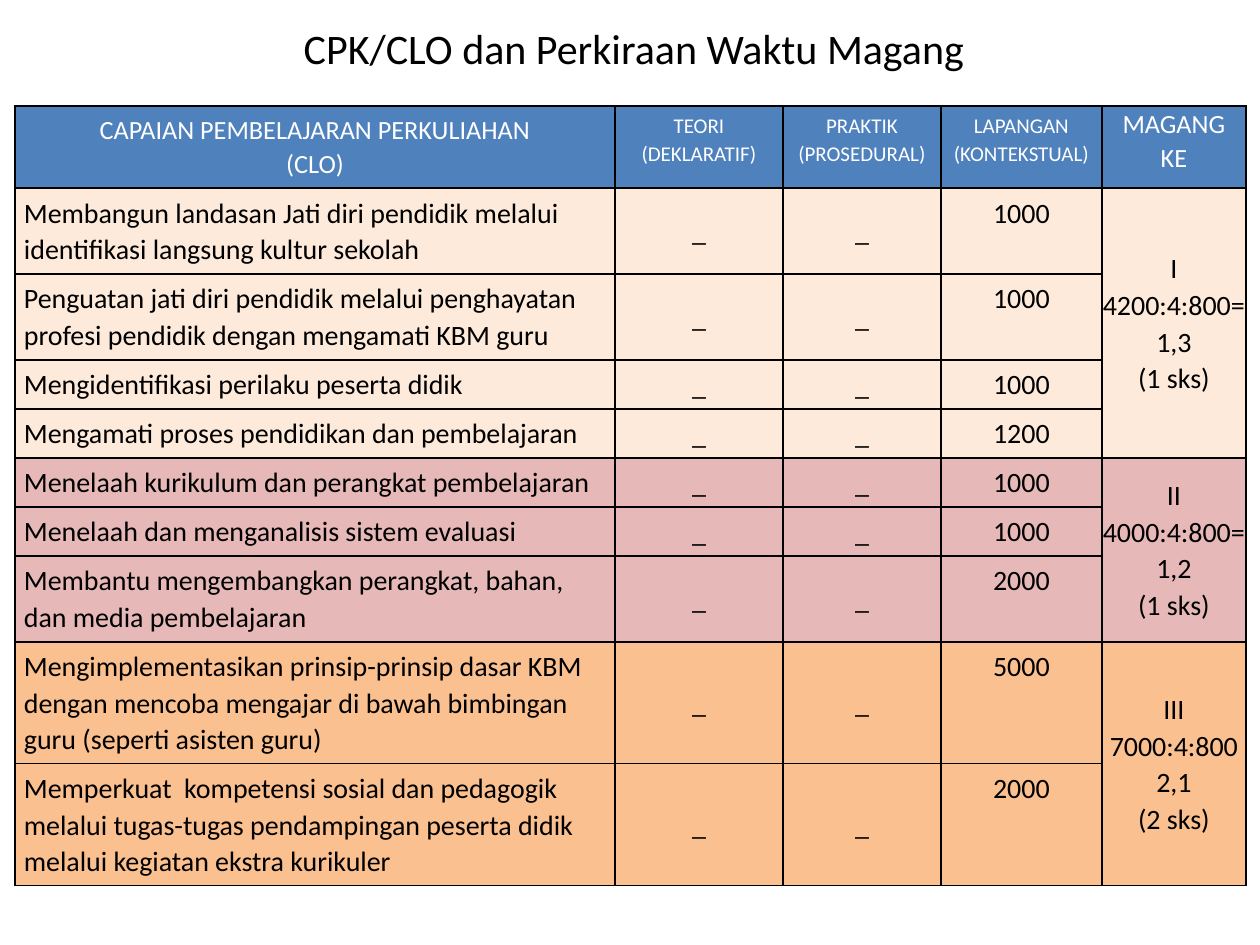
"""Build the slide of internship learning outcomes and their estimated time."""
from dataclasses import dataclass

from lxml.etree import SubElement
from pptx import Presentation
from pptx.dml.color import RGBColor
from pptx.enum.text import MSO_ANCHOR as Anchor, MSO_AUTO_SIZE as AutoSize, PP_ALIGN as Align
from pptx.oxml.ns import qn
from pptx.util import Emu, Pt


@dataclass(frozen=True)
class Theme:
    font: str = "Calibri"
    ink: str = "000000"
    header_ink: str = "FFFFFF"
    header_fill: str = "4F81BD"
    stage_fills: tuple = ("FDEADA", "E6B9B8", "FAC090")
    title_size: int = 24
    header_size: int = 15
    subheader_size: int = 12
    body_size: int = 16
    border_width: int = 1
    line_spacing: float = 1.07


def px(length):
    return Emu(round(length * 914400 / 126))


class SlideBuilder:
    def __init__(self, slide, theme):
        self.slide = slide
        self.theme = theme

    def style(self, text_frame, size, color, align):
        for paragraph in text_frame.paragraphs:
            paragraph.alignment = align
            paragraph.font.name = self.theme.font
            paragraph.font.size = Pt(size)
            paragraph.font.color.rgb = RGBColor.from_string(color)

    def title(self, text, left, top, width, height):
        box = self.slide.shapes.add_textbox(px(left), px(top), px(width), px(height))
        frame = box.text_frame
        frame.word_wrap = True
        frame.auto_size = AutoSize.SHAPE_TO_FIT_TEXT
        frame.text = text
        self.style(frame, self.theme.title_size, self.theme.ink, Align.CENTER)

    def table(self, left, top, widths, heights):
        table = self.slide.shapes.add_table(
            len(heights), len(widths), px(left), px(top), px(sum(widths)), px(sum(heights))
        ).table
        table.first_row = table.horz_banding = False
        for column, width in zip(table.columns, widths):
            column.width = px(width)
        for row, height in zip(table.rows, heights):
            row.height = px(height)
        return table

    def frame_cell(self, cell, fill):
        properties = cell._tc.get_or_add_tcPr()
        for side in ("a:lnL", "a:lnR", "a:lnT", "a:lnB"):
            line = SubElement(properties, qn(side), w=str(Pt(self.theme.border_width)))
            solid = SubElement(line, qn("a:solidFill"))
            SubElement(solid, qn("a:srgbClr"), val=self.theme.ink)
        cell.fill.solid()
        cell.fill.fore_color.rgb = RGBColor.from_string(fill)

    def write_cell(self, cell, text, size, color, align=Align.CENTER,
                   anchor=Anchor.TOP, margins=(9, 6)):
        cell.margin_left = cell.margin_right = px(margins[0])
        cell.margin_top = cell.margin_bottom = px(margins[1])
        cell.vertical_anchor = anchor
        cell.text = text
        self.style(cell.text_frame, size, color, align)
        for paragraph in cell.text_frame.paragraphs:
            paragraph.line_spacing = self.theme.line_spacing


HEADERS = [
    "CAPAIAN PEMBELAJARAN PERKULIAHAN\n(CLO)",
    "TEORI\n(DEKLARATIF)",
    "PRAKTIK (PROSEDURAL)",
    "LAPANGAN (KONTEKSTUAL)",
    "MAGANG\nKE",
]

STAGES = [
    ("I\n4200:4:800=\n1,3\n(1 sks)", [
        ("Membangun landasan Jati diri pendidik melalui\nidentifikasi langsung kultur sekolah", "1000"),
        ("Penguatan jati diri pendidik melalui penghayatan profesi pendidik dengan mengamati KBM guru", "1000"),
        ("Mengidentifikasi perilaku peserta didik", "1000"),
        ("Mengamati proses pendidikan dan pembelajaran", "1200"),
    ]),
    ("II\n4000:4:800=\n1,2\n(1 sks)", [
        ("Menelaah kurikulum dan perangkat pembelajaran", "1000"),
        ("Menelaah dan menganalisis sistem evaluasi", "1000"),
        ("Membantu mengembangkan perangkat, bahan, dan media pembelajaran", "2000"),
    ]),
    ("III\n7000:4:800\n2,1\n(2 sks)", [
        ("Mengimplementasikan prinsip-prinsip dasar KBM dengan mencoba mengajar "
         "di bawah bimbingan guru (seperti asisten guru)", "5000"),
        ("Memperkuat  kompetensi sosial dan pedagogik melalui tugas-tugas "
         "pendampingan peserta didik melalui kegiatan ekstra kurikuler", "2000"),
    ]),
]

COLUMN_WIDTHS = [600, 168, 158, 161, 144]
ROW_HEIGHTS = [82, 86, 86, 49, 49, 49, 49, 86, 122, 122]


def fill_header(builder, table):
    theme = builder.theme
    sizes = [theme.header_size, *[theme.subheader_size] * 3, theme.header_size]
    for column, (text, size) in enumerate(zip(HEADERS, sizes)):
        cell = table.cell(0, column)
        margins = (0, 0) if column == 4 else (9, 6)
        builder.frame_cell(cell, theme.header_fill)
        builder.write_cell(cell, text, size, theme.header_ink, margins=margins)


def fill_stages(builder, table):
    theme = builder.theme
    body = (theme.body_size, theme.ink)
    row = 1
    for (summary, outcomes), fill in zip(STAGES, theme.stage_fills):
        first_row = row
        for outcome, minutes in outcomes:
            cells = [table.cell(row, column) for column in range(5)]
            for cell in cells:
                builder.frame_cell(cell, fill)
            builder.write_cell(cells[0], outcome, *body, align=Align.LEFT)
            for cell in cells[1:3]:
                builder.write_cell(cell, "_", *body, anchor=Anchor.MIDDLE)
            builder.write_cell(cells[3], minutes, *body)
            row += 1
        stage = table.cell(first_row, 4)
        stage.merge(table.cell(row - 1, 4))
        builder.write_cell(stage, summary, *body, anchor=Anchor.MIDDLE, margins=(0, 0))


def main():
    presentation = Presentation()
    presentation.slide_width, presentation.slide_height = px(1260), px(945)
    slide = presentation.slides.add_slide(presentation.slide_layouts[6])
    builder = SlideBuilder(slide, Theme())
    table = builder.table(15, 106, COLUMN_WIDTHS, ROW_HEIGHTS)
    fill_header(builder, table)
    fill_stages(builder, table)
    builder.title("CPK/CLO dan Perkiraan Waktu Magang", 172, 16, 924, 63)
    presentation.save("out.pptx")


if __name__ == "__main__":
    main()
